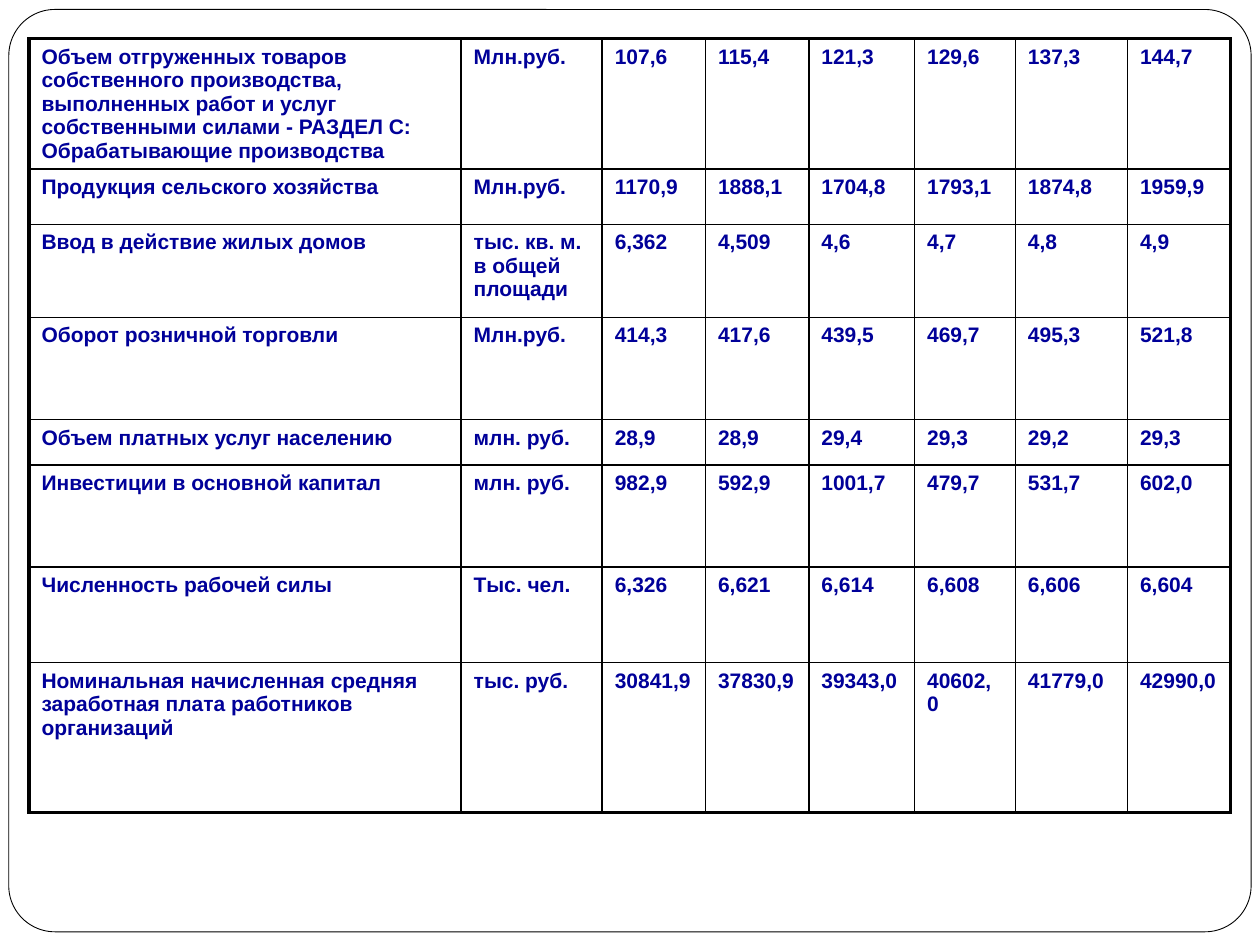
from lxml import etree
from pptx import Presentation
from pptx.dml.color import RGBColor
from pptx.enum import shapes
from pptx.oxml.ns import qn
from pptx.util import Inches, Pt

HUES = {"ink": "000099", "rule": "000000", "paper": "FFFFFF"}
WIDE, HIGH = 10, 7.5
COLS = [3.43, 1.12, 0.82, 0.82, 0.84, 0.8, 0.89, 0.82]
ROWS = [0.96, 0.44, 0.74, 0.81, 0.36, 0.81, 0.76, 1.19]
THIN, THICK = 1, 2.25
DATA = [
    ["Объем отгруженных товаров собственного производства, выполненных работ и услуг "
     "собственными силами - РАЗДЕЛ С: Обрабатывающие производства",
     "Млн.руб.", "107,6", "115,4", "121,3", "129,6", "137,3", "144,7"],
    ["Продукция сельского хозяйства",
     "Млн.руб.", "1170,9", "1888,1", "1704,8", "1793,1", "1874,8", "1959,9"],
    ["Ввод в действие жилых домов",
     "тыс. кв. м. в общей площади", "6,362", "4,509", "4,6", "4,7", "4,8", "4,9"],
    ["Оборот розничной торговли",
     "Млн.руб.", "414,3", "417,6", "439,5", "469,7", "495,3", "521,8"],
    ["Объем платных услуг населению",
     "млн. руб.", "28,9", "28,9", "29,4", "29,3", "29,2", "29,3"],
    ["Инвестиции в основной капитал",
     "млн. руб.", "982,9", "592,9", "1001,7", "479,7", "531,7", "602,0"],
    ["Численность рабочей силы",
     "Тыс. чел.", "6,326", "6,621", "6,614", "6,608", "6,606", "6,604"],
    ["Номинальная начисленная средняя заработная плата работников организаций",
     "тыс. руб.", "30841,9", "37830,9", "39343,0", "40602,0", "41779,0", "42990,0"],
]


def hue(name):
    """Return a named colour."""
    return RGBColor.from_string(HUES[name])


def frame(slide):
    """Draw the rounded border around the slide."""
    left, top = 0.007 * WIDE, 0.01 * HIGH
    box = slide.shapes.add_shape(
        shapes.MSO_SHAPE.ROUNDED_RECTANGLE, Inches(left), Inches(top),
        Inches(WIDE - 2 * left), Inches(0.976 * HIGH))
    box.adjustments[0] = 0.05
    box.shadow.inherit = False
    box.fill.solid()
    box.fill.fore_color.rgb = hue("paper")
    box.line.color.rgb = hue("rule")
    box.line.width = Pt(0.5)


def edge(cell, side, size):
    """Rule one side of a cell."""
    line = etree.SubElement(cell._tc.get_or_add_tcPr(), qn(f"a:ln{side}"), w=str(Pt(size)))
    fill = etree.SubElement(line, qn("a:solidFill"))
    etree.SubElement(fill, qn("a:srgbClr"), val=HUES["rule"])


def write(cell, words):
    """Put bold text with proportional spacing in a cell."""
    para = cell.text_frame.paragraphs[0]
    gap = etree.SubElement(para._p.get_or_add_pPr(), qn("a:spcBef"))
    etree.SubElement(gap, qn("a:spcPct"), val="20000")
    run = para.add_run()
    run.text = words
    run.font.name = "Arial"
    run.font.size = Pt(12)
    run.font.bold = True
    run.font.color.rgb = hue("ink")


def grid(slide):
    """Build the table of indicators with a heavy outer rule."""
    table = slide.shapes.add_table(
        len(ROWS), len(COLS), Inches(0.023 * WIDE), Inches(0.041 * HIGH),
        Inches(sum(COLS)), Inches(sum(ROWS))).table
    table.first_row = table.horz_banding = False
    for col, width in zip(table.columns, COLS):
        col.width = Inches(width)
    for r, (row, height) in enumerate(zip(table.rows, ROWS)):
        row.height = Inches(height)
        for c, cell in enumerate(row.cells):
            write(cell, DATA[r][c])
            outer = {"L": c == 0, "R": c == len(COLS) - 1,
                     "T": r == 0, "B": r == len(ROWS) - 1}
            for side, heavy in outer.items():
                edge(cell, side, THICK if heavy else THIN)
            cell.fill.background()


def main():
    """Build and save the slide."""
    deck = Presentation()
    deck.slide_width, deck.slide_height = Inches(WIDE), Inches(HIGH)
    slide = deck.slides.add_slide(deck.slide_layouts[6])
    frame(slide)
    grid(slide)
    deck.save("out.pptx")


if __name__ == "__main__":
    main()
